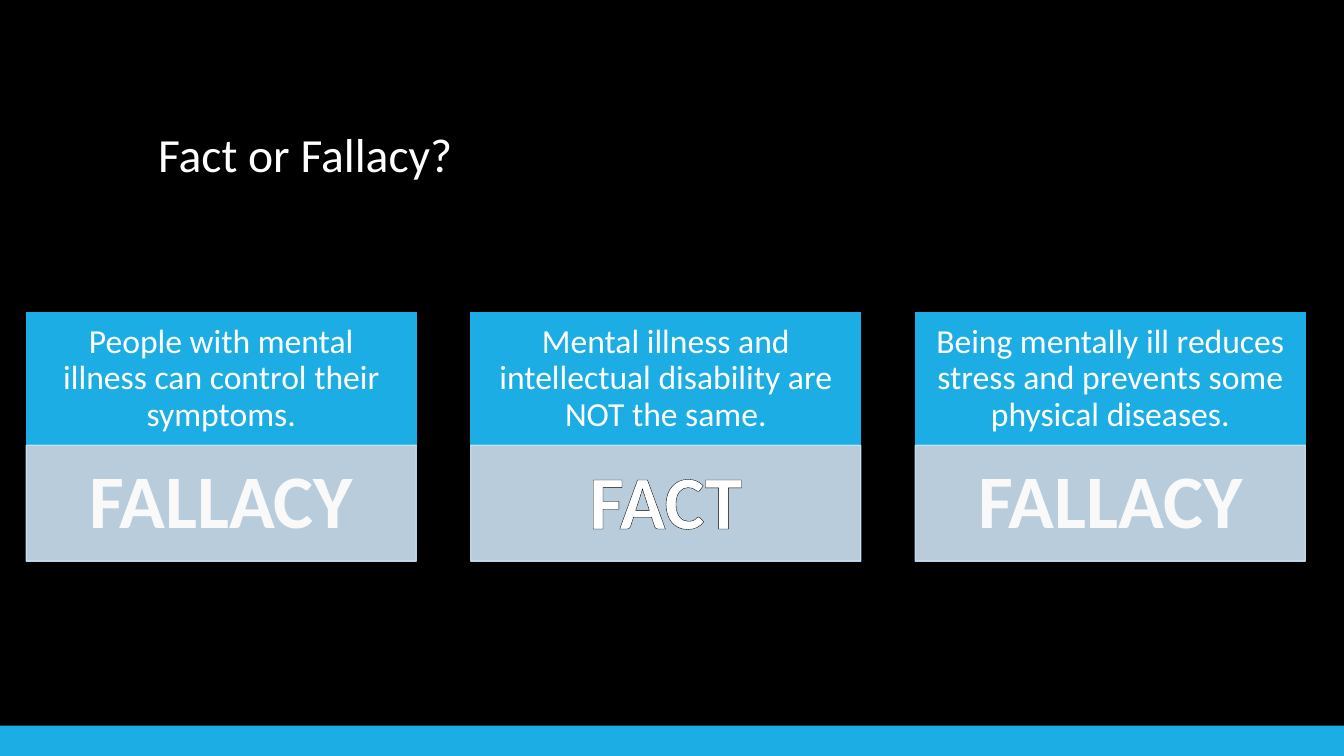
from dataclasses import dataclass

from lxml import etree
from pptx import Presentation
from pptx import util as u
from pptx.dml.color import RGBColor
from pptx.enum import dml, shapes, text
from pptx.oxml.ns import qn


@dataclass(frozen=True)
class Theme:
    font: str = "Calibri"
    background: str = "000000"
    accent: str = "1CADE4"
    pale: str = "CDE3F5"
    pale_opacity: int = 90
    white: str = "FFFFFF"
    fact_outline: str = "000000"
    fallacy_front: str = "DFE3E5"
    fallacy_back: str = "F9F9FA"
    fallacy_outline: str = "A1ACB2"
    title_size: int = 34
    statement_size: int = 24
    verdict_size: int = 54


@dataclass(frozen=True)
class Box:
    """An area counted in grid columns and rows."""
    column: float
    row: float
    columns: float
    rows: float


@dataclass(frozen=True)
class Card:
    statement: str
    is_fact: bool


THEME = Theme()
SLIDE_WIDTH, SLIDE_HEIGHT = u.Inches(13.33), u.Inches(7.5)
GRID_COLUMNS, GRID_ROWS = 40, 25

FOOTER = Box(0, 24, GRID_COLUMNS, 1)
TITLE = Box(4.41, 1.7, 31.2, 4.5)
CARD_LEFT, CARD_PITCH, CARD_COLUMNS = 0.78, 13.23, 11.61
STATEMENT_ROW, STATEMENT_ROWS = 10.33, 4.4
PANEL_ROW, PANEL_ROWS = STATEMENT_ROW + STATEMENT_ROWS, 3.83
VERDICT_ROW, VERDICT_ROWS = 14.83, 3.37
FACT_COLUMNS, FALLACY_COLUMNS = 5.22, 8.55

CARDS = (
    Card("People with mental illness can control their symptoms.", False),
    Card("Mental illness and intellectual disability are NOT the same.", True),
    Card("Being mentally ill reduces stress and prevents some physical diseases.", False),
)


def place(box: Box) -> tuple[int, int, int, int]:
    column, row = SLIDE_WIDTH / GRID_COLUMNS, SLIDE_HEIGHT / GRID_ROWS
    return (round(box.column * column), round(box.row * row),
            round(box.columns * column), round(box.rows * row))


def color(value: str) -> RGBColor:
    return RGBColor.from_string(value)


def add_rectangle(slide, box: Box, fill: str, outlined: bool = True, opacity: int = 100):
    shape = slide.shapes.add_shape(shapes.MSO_SHAPE.RECTANGLE, *place(box))
    shape.shadow.inherit = False
    shape.fill.solid()
    shape.fill.fore_color.rgb = color(fill)
    if outlined:
        shape.line.color.rgb = color(fill)
        shape.line.width = u.Pt(1)
    else:
        shape.line.fill.background()
    if opacity < 100:
        for tint in shape._element.spPr.iter(qn("a:srgbClr")):
            etree.SubElement(tint, qn("a:alpha"), val=str(opacity * 1000))
    return shape


def write(shape, words: str, size: int, centered: bool = True, spacing: float = 0.9):
    """Fills the shape with one white paragraph and returns its run."""
    shape.text_frame.text = words
    paragraph = shape.text_frame.paragraphs[0]
    paragraph.alignment = text.PP_ALIGN.CENTER if centered else text.PP_ALIGN.LEFT
    paragraph.line_spacing = spacing
    run = paragraph.runs[0]
    run.font.name = THEME.font
    run.font.size = u.Pt(size)
    run.font.color.rgb = color(THEME.white)
    return run


def outline_text(run, value: str, points: float) -> None:
    line = etree.Element(qn("a:ln"), w=str(u.Pt(points)))
    fill = etree.SubElement(line, qn("a:solidFill"))
    etree.SubElement(fill, qn("a:srgbClr"), val=value)
    run.font._element.insert(0, line)


def add_title(slide) -> None:
    title = slide.shapes.add_textbox(*place(TITLE))
    title.text_frame.word_wrap = True
    title.text_frame.vertical_anchor = text.MSO_ANCHOR.BOTTOM
    write(title, "Fact or Fallacy?", THEME.title_size, centered=False)


def add_tiles(slide, card: Card, left: float) -> None:
    statement = add_rectangle(
        slide, Box(left, STATEMENT_ROW, CARD_COLUMNS, STATEMENT_ROWS), THEME.accent)
    frame = statement.text_frame
    frame.word_wrap = True
    frame.vertical_anchor = text.MSO_ANCHOR.MIDDLE
    frame.margin_left = frame.margin_right = u.Inches(0.19)
    frame.margin_top = frame.margin_bottom = u.Inches(0.11)
    write(statement, card.statement, THEME.statement_size)
    add_rectangle(slide, Box(left, PANEL_ROW, CARD_COLUMNS, PANEL_ROWS),
                  THEME.pale, opacity=THEME.pale_opacity)


def add_verdict(slide, card: Card, left: float) -> None:
    columns = FACT_COLUMNS if card.is_fact else FALLACY_COLUMNS
    box = Box(left + (CARD_COLUMNS - columns) / 2, VERDICT_ROW, columns, VERDICT_ROWS)
    verdict = slide.shapes.add_textbox(*place(box))
    verdict.text_frame.word_wrap = False
    verdict.text_frame.auto_size = text.MSO_AUTO_SIZE.SHAPE_TO_FIT_TEXT
    run = write(verdict, "FACT" if card.is_fact else "FALLACY",
                THEME.verdict_size, spacing=1.0)
    run.font.bold = True
    if card.is_fact:
        outline_text(run, THEME.fact_outline, 0.75)
    else:
        fill = run.font.fill
        fill.patterned()
        fill.pattern = dml.MSO_PATTERN.DARK_UPWARD_DIAGONAL
        fill.fore_color.rgb = color(THEME.fallacy_front)
        fill.back_color.rgb = color(THEME.fallacy_back)
        outline_text(run, THEME.fallacy_outline, 1)


def main() -> None:
    presentation = Presentation()
    presentation.slide_width, presentation.slide_height = SLIDE_WIDTH, SLIDE_HEIGHT
    slide = presentation.slides.add_slide(presentation.slide_layouts[6])
    slide.background.fill.solid()
    slide.background.fill.fore_color.rgb = color(THEME.background)

    add_rectangle(slide, FOOTER, THEME.accent, outlined=False)
    add_title(slide)
    for index, card in enumerate(CARDS):
        left = CARD_LEFT + index * CARD_PITCH
        add_tiles(slide, card, left)
        add_verdict(slide, card, left)
    presentation.save("out.pptx")


if __name__ == "__main__":
    main()
